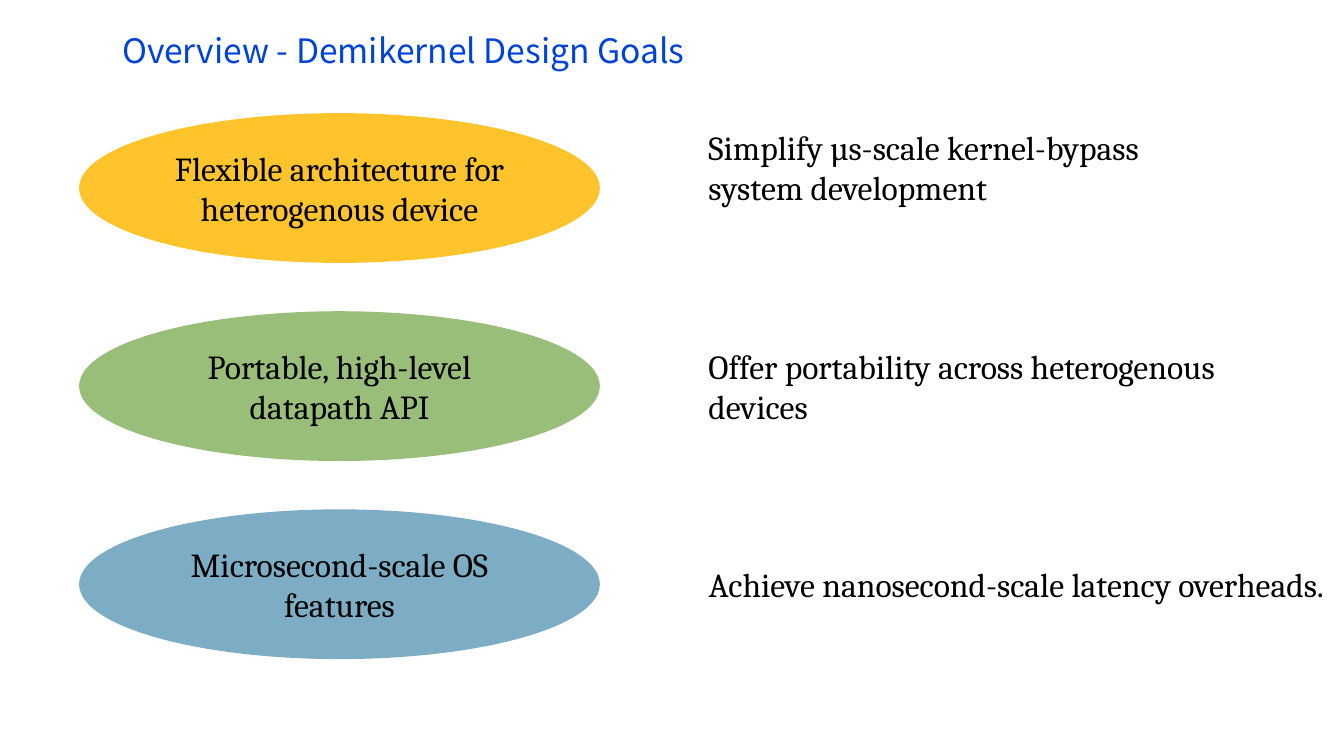
"""Build the Demikernel design goals slide."""
from pptx import Presentation
from pptx.dml.color import RGBColor
from pptx.enum import shapes, text
from pptx.util import Pt

BLUE = RGBColor(0x00, 0x43, 0xDB)
BLACK = RGBColor(0x00, 0x00, 0x00)
AMBER = RGBColor(0xFF, 0xC4, 0x2C)
GREEN = RGBColor(0x98, 0xBE, 0x7A)
STEEL = RGBColor(0x7D, 0xAD, 0xC4)

TITLE = "Overview - Demikernel Design Goals"
GOALS = [
    ("Flexible architecture for heterogenous device", AMBER,
     "Simplify µs-scale kernel-bypass system development", 338.5),
    ("Portable, high-level datapath API", GREEN,
     "Offer portability across heterogenous devices", 412.5),
    ("Microsecond-scale OS features", STEEL,
     "Achieve nanosecond-scale latency overheads.", 461.5),
]
TITLE_FONT = {"name": "Noto Sans CJK SC", "size": Pt(24), "bold": False}
BODY_FONT = {"name": "Cambria", "size": Pt(24), "bold": False}
FRAME = {"word_wrap": True, "auto_size": text.MSO_AUTO_SIZE.NONE}

ELLIPSE_LEFT, ELLIPSE_TOP, ELLIPSE_PITCH = 57, 81.3, 141.5
ELLIPSE_WIDTH, ELLIPSE_HEIGHT = 371, 106
AIM_LEFT, AIM_TOP, AIM_PITCH, AIM_HEIGHT = 499, 87, 156.25, 65.5


def write(shape, words, font, color, alignment, anchor):
    """Put one formatted paragraph into a shape."""
    frame = shape.text_frame
    for name, value in {**FRAME, "vertical_anchor": anchor}.items():
        setattr(frame, name, value)
    paragraph = frame.paragraphs[0]
    paragraph.alignment = alignment
    run = paragraph.add_run()
    run.text = words
    for name, value in font.items():
        setattr(run.font, name, value)
    run.font.color.rgb = color


def main():
    """Lay out the title and the three goal rows."""
    presentation = Presentation()
    presentation.slide_width, presentation.slide_height = Pt(960), Pt(540)
    slide = presentation.slides.add_slide(presentation.slide_layouts[5])

    title = slide.shapes.title
    place = {"left": 80, "top": 18, "width": 870, "height": 36}
    for name, value in place.items():
        setattr(title, name, Pt(value))
    write(title, TITLE, TITLE_FONT, BLUE, text.PP_ALIGN.LEFT, text.MSO_ANCHOR.TOP)

    for row, (goal, color, aim, aim_width) in enumerate(GOALS):
        ellipse = slide.shapes.add_shape(
            shapes.MSO_SHAPE.OVAL, Pt(ELLIPSE_LEFT), Pt(ELLIPSE_TOP + row * ELLIPSE_PITCH),
            Pt(ELLIPSE_WIDTH), Pt(ELLIPSE_HEIGHT))
        ellipse.shadow.inherit = False
        ellipse.fill.solid()
        ellipse.fill.fore_color.rgb = color
        ellipse.line.color.rgb = color
        ellipse.line.width = Pt(1)
        write(ellipse, goal, BODY_FONT, BLACK, text.PP_ALIGN.CENTER, text.MSO_ANCHOR.MIDDLE)

        box = slide.shapes.add_textbox(
            Pt(AIM_LEFT), Pt(AIM_TOP + row * AIM_PITCH), Pt(aim_width), Pt(AIM_HEIGHT))
        write(box, aim, BODY_FONT, BLACK, text.PP_ALIGN.LEFT, text.MSO_ANCHOR.TOP)

    presentation.save("out.pptx")


if __name__ == "__main__":
    main()
